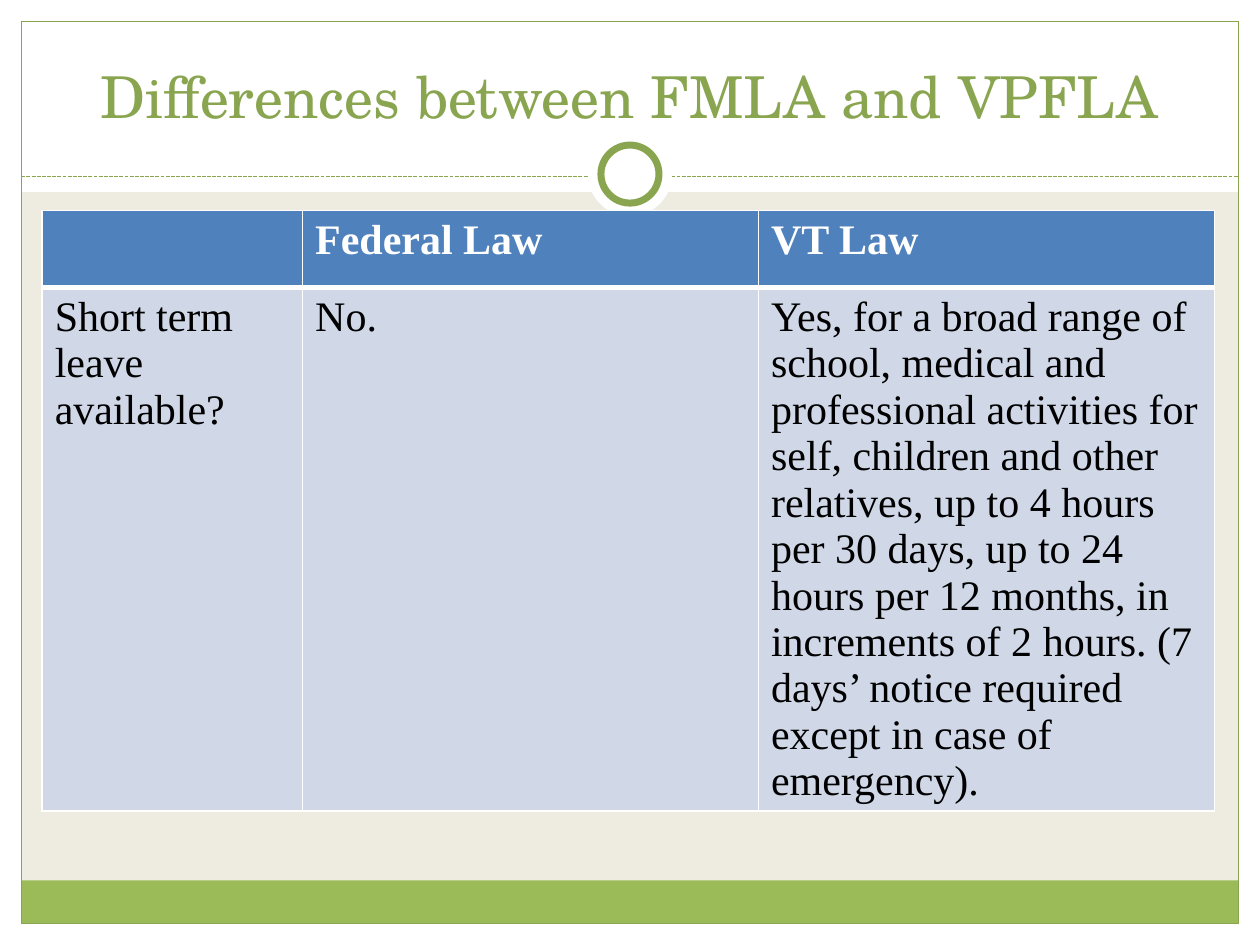
from dataclasses import dataclass

from lxml import etree
from pptx import Presentation
from pptx.dml.color import RGBColor
from pptx.enum import dml, shapes, text
from pptx.oxml import ns
from pptx.util import Cm, Pt


@dataclass(frozen=True)
class Theme:
    background: str = "EEECE1"
    white: str = "FFFFFF"
    black: str = "000000"
    footer: str = "9BBB59"
    accent: str = "89A54F"
    header: str = "4F81BD"
    body: str = "D0D8E8"
    title_font: str = "TeX Gyre Schola"
    table_font: str = "Times New Roman"
    title_size: int = 33
    table_size: int = 24


THEME = Theme()
WIDTH, HEIGHT, MARGIN = 25.4, 19.05, 0.43
RECTANGLE = shapes.MSO_SHAPE.RECTANGLE
OVAL = shapes.MSO_SHAPE.OVAL
COLUMN_WIDTHS = (5.25, 9.19, 9.19)
ROW_HEIGHTS = (1.56, 10.55)
ROWS = (
    ("", "Federal Law", "VT Law"),
    (
        "Short term leave available?",
        "No.",
        "Yes, for a broad range of school, medical and professional activities "
        "for self, children and other relatives, up to 4 hours per 30 days, up to "
        "24 hours per 12 months, in increments of 2 hours. (7 days’ notice "
        "required except in case of emergency).",
    ),
)


def color(value):
    return RGBColor.from_string(value)


def paint(fill, value):
    fill.solid()
    fill.fore_color.rgb = color(value)


def set_font(paragraph, name, size, value, bold=False):
    font = paragraph.font
    font.name, font.size, font.bold = name, Pt(size), bold
    font.color.rgb = color(value)


def add_panel(slide, kind, box, fill=None, line_width=None):
    shape = slide.shapes.add_shape(kind, *map(Cm, box))
    shape.shadow.inherit = False
    if fill:
        paint(shape.fill, fill)
    else:
        shape.fill.background()
    if line_width:
        shape.line.color.rgb = color(THEME.accent)
        shape.line.width = Pt(line_width)
    else:
        shape.line.fill.background()


def add_circle(slide, center_y, diameter, line_width=None):
    box = ((WIDTH - diameter) / 2, center_y - diameter / 2, diameter, diameter)
    add_panel(slide, OVAL, box, THEME.white, line_width)


def add_divider(slide, y):
    connector = slide.shapes.add_connector(
        shapes.MSO_CONNECTOR.STRAIGHT, Cm(MARGIN), Cm(y), Cm(WIDTH - MARGIN), Cm(y)
    )
    connector.line.color.rgb = color(THEME.accent)
    connector.line.width = Pt(0.75)
    connector.line.dash_style = dml.MSO_LINE.SQUARE_DOT
    etree.SubElement(connector.element.spPr, ns.qn("a:effectLst"))


def add_frame(slide):
    inner_width = WIDTH - 2 * MARGIN
    for box in (
        (0, HEIGHT - MARGIN, WIDTH, MARGIN),
        (0, 0, WIDTH, 3.87),
        (0, 0, MARGIN, HEIGHT),
        (WIDTH - MARGIN, 0, MARGIN, HEIGHT),
    ):
        add_panel(slide, RECTANGLE, box, THEME.white)
    add_panel(slide, RECTANGLE, (MARGIN, 17.75, inner_width, 0.87), THEME.footer)
    outline = (MARGIN, MARGIN, inner_width, HEIGHT - 2 * MARGIN)
    add_panel(slide, RECTANGLE, outline, line_width=0.75)
    add_divider(slide, 3.56)
    add_circle(slide, 3.51, 1.7)
    add_circle(slide, 3.51, 1.17, 4)


def add_title(slide, wording):
    title = slide.shapes.title
    slide.shapes.element.append(title.element)
    title.left, title.top, title.width, title.height = map(Cm, (0.85, 0.64, 23.7, 2.11))
    frame = title.text_frame
    frame.text = wording
    frame.word_wrap = True
    frame.auto_size = text.MSO_AUTO_SIZE.NONE
    frame.vertical_anchor = text.MSO_ANCHOR.BOTTOM
    paragraph = frame.paragraphs[0]
    paragraph.alignment = text.PP_ALIGN.CENTER
    set_font(paragraph, THEME.title_font, THEME.title_size, THEME.accent)


def set_borders(cell, widths):
    properties = cell._tc.get_or_add_tcPr()
    for side, width in widths.items():
        line = etree.SubElement(properties, ns.qn(f"a:ln{side}"), w=str(Pt(width)))
        fill = etree.SubElement(line, ns.qn("a:solidFill"))
        etree.SubElement(fill, ns.qn("a:srgbClr"), val=THEME.white)


def add_comparison(slide):
    table = slide.shapes.add_table(
        len(ROWS), len(COLUMN_WIDTHS), Cm(0.85), Cm(4.24),
        Cm(sum(COLUMN_WIDTHS)), Cm(sum(ROW_HEIGHTS)),
    ).table
    for column, width in zip(table.columns, COLUMN_WIDTHS):
        column.width = Cm(width)
    for row, height, wordings in zip(table.rows, ROW_HEIGHTS, ROWS):
        row.height = Cm(height)
        is_header = wordings is ROWS[0]
        top, bottom = (1, 3) if is_header else (3, 1)
        for cell, wording in zip(row.cells, wordings):
            cell.text = wording
            set_borders(cell, {"L": 1, "R": 1, "T": top, "B": bottom})
            paint(cell.fill, THEME.header if is_header else THEME.body)
            set_font(
                cell.text_frame.paragraphs[0], THEME.table_font, THEME.table_size,
                THEME.white if is_header else THEME.black, is_header,
            )


def main():
    presentation = Presentation()
    presentation.slide_width, presentation.slide_height = Cm(WIDTH), Cm(HEIGHT)
    slide = presentation.slides.add_slide(presentation.slide_layouts[5])
    paint(slide.background.fill, THEME.background)
    add_frame(slide)
    add_title(slide, "Differences between FMLA and VPFLA")
    add_comparison(slide)
    presentation.save("out.pptx")


if __name__ == "__main__":
    main()
